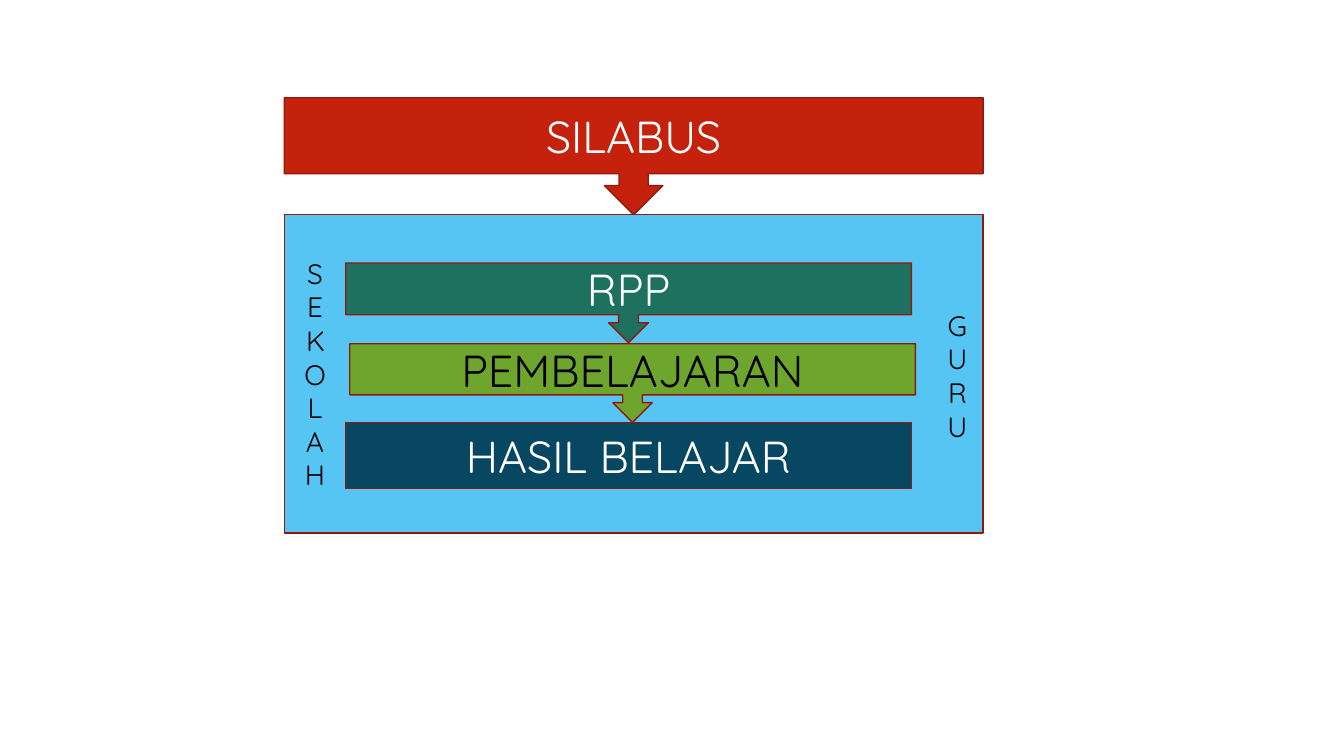
from pptx import Presentation
from pptx.dml.color import RGBColor
from pptx.enum.shapes import MSO_SHAPE
from pptx.enum.text import MSO_ANCHOR, PP_ALIGN
from pptx.util import Inches, Pt

RECTANGLE = MSO_SHAPE.RECTANGLE
CALLOUT = MSO_SHAPE.DOWN_ARROW_CALLOUT
MIDDLE = MSO_ANCHOR.MIDDLE
CENTER = PP_ALIGN.CENTER

COLORS = {
    "outline": "91190A",
    "sky": "56C5F4",
    "red": "C4220D",
    "teal": "1F715F",
    "green": "6EA52D",
    "navy": "074762",
    "white": "FFFFFF",
    "black": "000000",
}


class Diagram:
    font = "Quicksand"
    stage_size = 32
    side_size = 20

    def __init__(self, deck):
        self.column = deck.slide_width / 100
        self.row = deck.slide_height / 100
        self.slide = deck.slides.add_slide(deck.slide_layouts[6])

    def place(self, left, top, width, height):
        return (round(left * self.column), round(top * self.row),
                round(width * self.column), round(height * self.row))

    def add_wording(self, frame, wording, size, color):
        frame.word_wrap = True
        frame.vertical_anchor = MIDDLE
        line = frame.paragraphs[0]
        line.alignment = CENTER
        run = line.add_run()
        run.text = wording
        run.font.name = self.font
        run.font.size = Pt(size)
        run.font.color.rgb = RGBColor.from_string(COLORS[color])

    def block(self, kind, area, fill):
        block = self.slide.shapes.add_shape(kind, *self.place(*area))
        block.shadow.inherit = False
        block.fill.solid()
        block.fill.fore_color.rgb = RGBColor.from_string(COLORS[fill])
        block.line.color.rgb = RGBColor.from_string(COLORS["outline"])
        block.line.width = Pt(1)
        return block

    def stage(self, kind, area, fill, wording, color="white"):
        block = self.block(kind, area, fill)
        self.add_wording(block.text_frame, wording, self.stage_size, color)

    def side_label(self, area, wording):
        label = self.slide.shapes.add_textbox(*self.place(*area))
        self.add_wording(label.text_frame, wording, self.side_size, "black")
        label.text_frame._txBody.bodyPr.set("vert", "wordArtVert")


def main():
    deck = Presentation()
    deck.slide_width = Inches(13.33)
    deck.slide_height = Inches(7.5)
    diagram = Diagram(deck)

    outer_left, outer_width = 21.15, 52
    inner_left, inner_width = 25.73, 42.08
    school_top, school_height = 28.4, 42.13
    syllabus_height = 15.47
    plan_top, plan_height = 34.8, 10.53
    teacher_width = 3.83

    diagram.block(RECTANGLE, (outer_left, school_top, outer_width, school_height), "sky")
    diagram.stage(CALLOUT, (outer_left, school_top - syllabus_height, outer_width, syllabus_height),
                  "red", "SILABUS")
    diagram.stage(CALLOUT, (inner_left, plan_top, inner_width, plan_height), "teal", "RPP")
    diagram.stage(CALLOUT, (inner_left + 0.3, 45.47, inner_width, 10.4),
                  "green", "PEMBELAJARAN", "black")
    diagram.stage(RECTANGLE, (inner_left, 55.87, inner_width, 8.8), "navy", "HASIL BELAJAR")

    diagram.side_label((outer_left, school_top, inner_left - outer_left, school_height), "SEKOLAH")
    diagram.side_label((outer_left + outer_width - teacher_width, plan_top, teacher_width, 29.73),
                       "GURU")

    deck.save("out.pptx")


if __name__ == "__main__":
    main()
